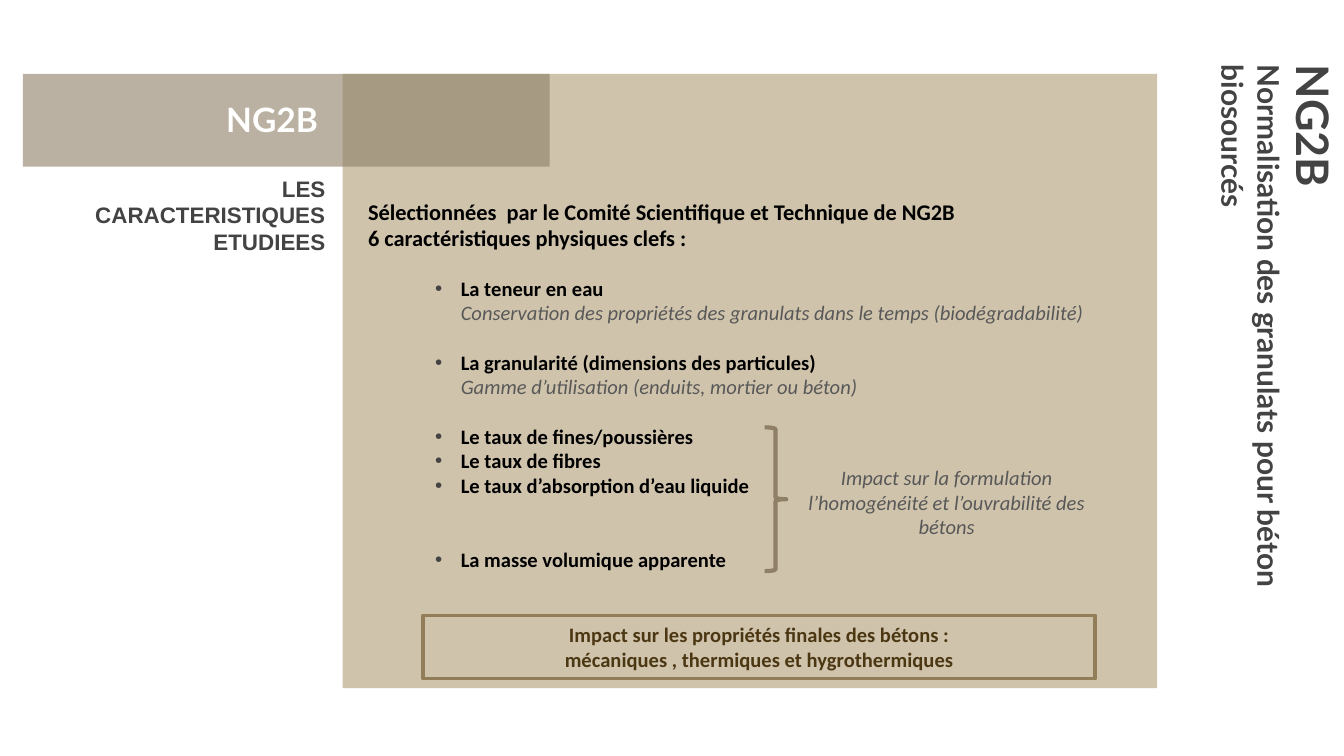
"""Build the NG2B slide on the studied characteristics of bio-based aggregates."""
from lxml import etree
from pptx import Presentation
from pptx.dml.color import RGBColor
from pptx.enum.shapes import MSO_SHAPE
from pptx.enum.text import MSO_ANCHOR, PP_ALIGN
from pptx.oxml.ns import qn
from pptx.util import Inches, Pt

RECTANGLE, RIGHT_BRACE = MSO_SHAPE.RECTANGLE, MSO_SHAPE.RIGHT_BRACE
TOP, MIDDLE = MSO_ANCHOR.TOP, MSO_ANCHOR.MIDDLE
LEFT, CENTER, RIGHT = PP_ALIGN.LEFT, PP_ALIGN.CENTER, PP_ALIGN.RIGHT

THEME = {
    "panel": "CFC3AC", "band": "908269", "brace": "8E7F66", "frame": "927D59",
    "bullet": "434343",
    "styles": {
        "side title": ("Lato", 24, "434343", True, False),
        "side subtitle": ("Lato", 16, "434343", True, False),
        "band": ("Lato", 18, "FFFFFF", True, False),
        "heading": ("Arial", 12, "434343", True, False),
        "intro": ("Calibri", 12, "000000", True, False),
        "item": ("Calibri", 11, "000000", True, False),
        "note": ("Calibri", 11, "585858", False, True),
        "impact": ("Calibri", 11, "585858", False, True),
        "result": ("Calibri", 11, "4C3713", True, False),
    },
}
INDENTS = {"heading": (0.19, 0), "intro": (0.19, 0), "item": (0.88, -0.19), "note": (0.88, 0)}
LINE_PITCH = {"intro": 14, "item": 13.2, "note": 13.2}

SIDE_TITLE = [("side title", "NG2B"),
              ("side subtitle", "Normalisation des granulats pour béton biosourcés")]
BAND_TITLE = [("band", "NG2B")]
HEADING = [("heading", "LES CARACTERISTIQUES ETUDIEES")]
INTRO = [("intro", "Sélectionnées\u00a0 par le Comité Scientifique et Technique\u00a0de NG2B"),
         ("intro", "6 caractéristiques physiques clefs :")]
GROUPS = [
    (1, [("item", "La teneur en eau"),
         ("note", "Conservation des propriétés des granulats dans le temps (biodégradabilité)")]),
    (1, [("item", "La granularité (dimensions des particules)"),
         ("note", "Gamme d’utilisation (enduits, mortier ou béton)")]),
    (1, [("item", "Le taux de fines/poussières"),
         ("item", "Le taux de fibres"),
         ("item", "Le taux d’absorption d’eau liquide")]),
    (2, [("item", "La masse volumique apparente")]),
]
FORMULATION = [("impact", "Impact sur la formulation l’homogénéité et l’ouvrabilité des bétons")]
RESULT = [("result", "Impact sur les propriétés finales des bétons :"),
          ("result", "mécaniques , thermiques et hygrothermiques")]


def add_shape(slide, kind, box, fill=None, line=None, width=0, alpha=None):
    shape = slide.shapes.add_shape(kind, *map(Inches, box))
    shape.shadow.inherit = False
    if fill:
        shape.fill.solid()
        shape.fill.fore_color.rgb = RGBColor.from_string(fill)
    else:
        shape.fill.background()
    if alpha:
        color = shape._element.spPr.find(qn("a:solidFill"))[0]
        etree.SubElement(color, qn("a:alpha"), val=str(alpha * 1000))
    if line:
        shape.line.color.rgb = RGBColor.from_string(line)
        shape.line.width = Pt(width)
    else:
        shape.line.fill.background()
    return shape


def set_indent(paragraph, style):
    margin, indent = INDENTS[style]
    properties = paragraph._p.get_or_add_pPr()
    properties.set("marL", str(Inches(margin)))
    properties.set("indent", str(Inches(indent)))
    if style == "item":
        color = etree.SubElement(properties, qn("a:buClr"))
        etree.SubElement(color, qn("a:srgbClr"), val=THEME["bullet"])
        etree.SubElement(properties, qn("a:buFont"), typeface="Arial")
        etree.SubElement(properties, qn("a:buChar"), char="•")


def set_style(paragraph, style):
    if style in INDENTS:
        set_indent(paragraph, style)
    if style in LINE_PITCH:
        paragraph.line_spacing = Pt(LINE_PITCH[style])
    font = paragraph.font
    font.name, size, color, font.bold, font.italic = THEME["styles"][style]
    font.size = Pt(size)
    font.color.rgb = RGBColor.from_string(color)


def write(shape, lines, align=CENTER, anchor=MIDDLE, inset=0.1):
    frame = shape.text_frame
    frame.word_wrap = True
    frame.vertical_anchor = anchor
    frame.margin_left = frame.margin_right = Inches(0.1)
    frame.margin_top = frame.margin_bottom = Inches(inset)
    frame.text = "\n".join(text for _, text in lines)
    for paragraph, (style, _) in zip(frame.paragraphs, lines):
        paragraph.alignment = align
        set_style(paragraph, style)


def add_text(slide, box, lines, **options):
    shape = slide.shapes.add_textbox(*map(Inches, box))
    write(shape, lines, **options)
    return shape


def add_characteristics(slide):
    lines, gaps = list(INTRO), {}
    for blank_lines, group in GROUPS:
        gaps[len(lines)] = blank_lines * LINE_PITCH["item"]
        lines += group
    shape = add_text(slide, (2.45, 1.38, 6.29, 3.33), lines, align=LEFT, anchor=TOP)
    for index, gap in gaps.items():
        shape.text_frame.paragraphs[index].space_before = Pt(gap)


def main():
    presentation = Presentation()
    presentation.slide_width = Inches(10)
    presentation.slide_height = presentation.slide_width * 9 // 16
    slide = presentation.slides.add_slide(presentation.slide_layouts[6])

    add_shape(slide, RECTANGLE, (2.55, 0.55, 6.06, 4.57), THEME["panel"])
    side_title = add_text(slide, (7.01, 2.32, 5, 1.13), SIDE_TITLE, align=LEFT)
    side_title.rotation = 90
    add_shape(slide, RECTANGLE, (0.17, 0.55, 3.92, 0.69), THEME["band"], alpha=62)
    add_text(slide, (0.26, 0.64, 3.53, 0.49), BAND_TITLE)
    add_characteristics(slide)
    add_text(slide, (0.19, 1.2, 2.33, 0.9), HEADING, align=RIGHT, anchor=TOP)
    add_text(slide, (5.91, 3.41, 2.27, 0.66), FORMULATION, anchor=TOP, inset=0.05)
    add_shape(slide, RIGHT_BRACE, (5.69, 3.18, 0.16, 1.07), line=THEME["brace"], width=2.25)
    result = add_shape(slide, RECTANGLE, (3.15, 4.58, 5, 0.47), line=THEME["frame"], width=2)
    write(result, RESULT, inset=0.05)

    presentation.save("out.pptx")


if __name__ == "__main__":
    main()
